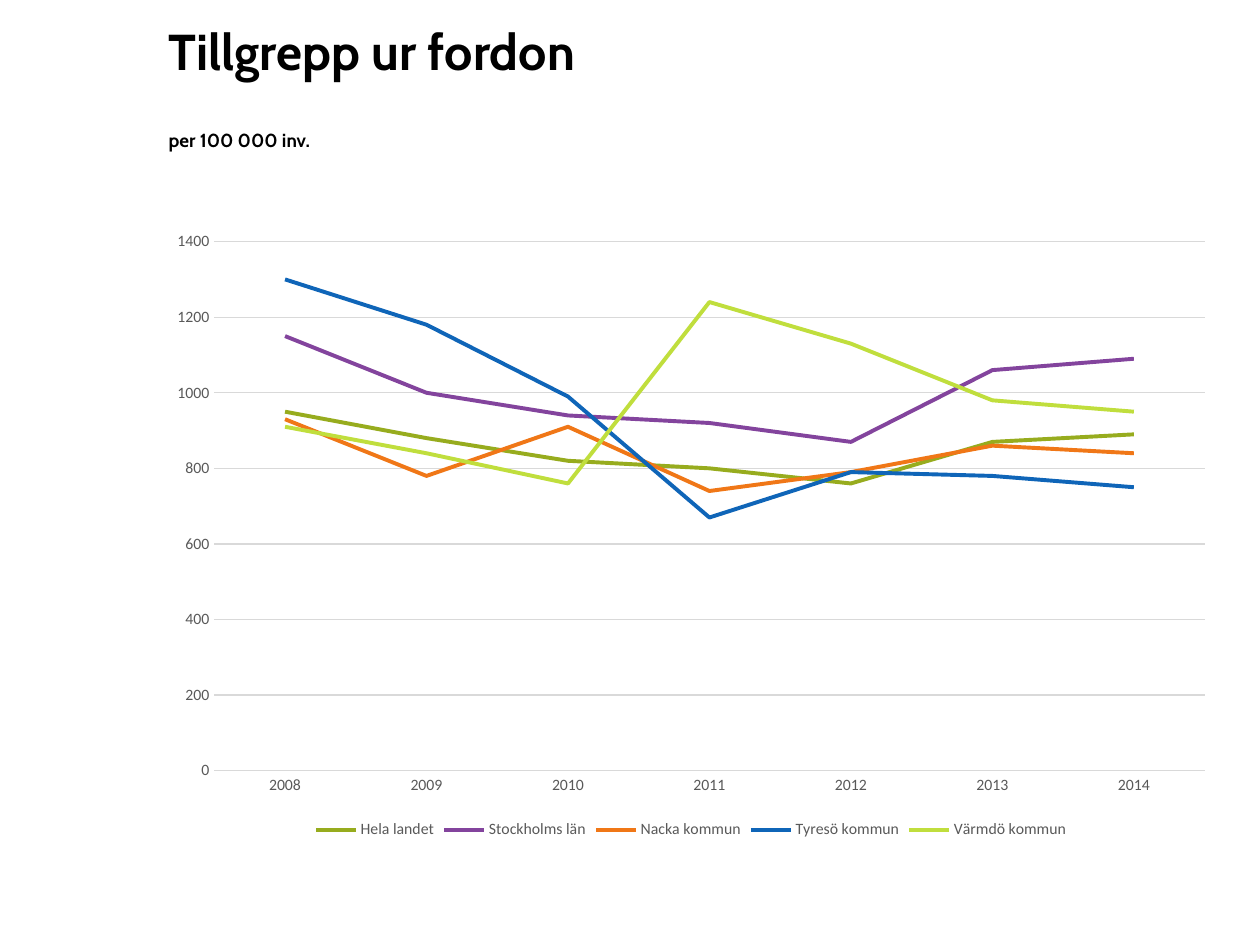
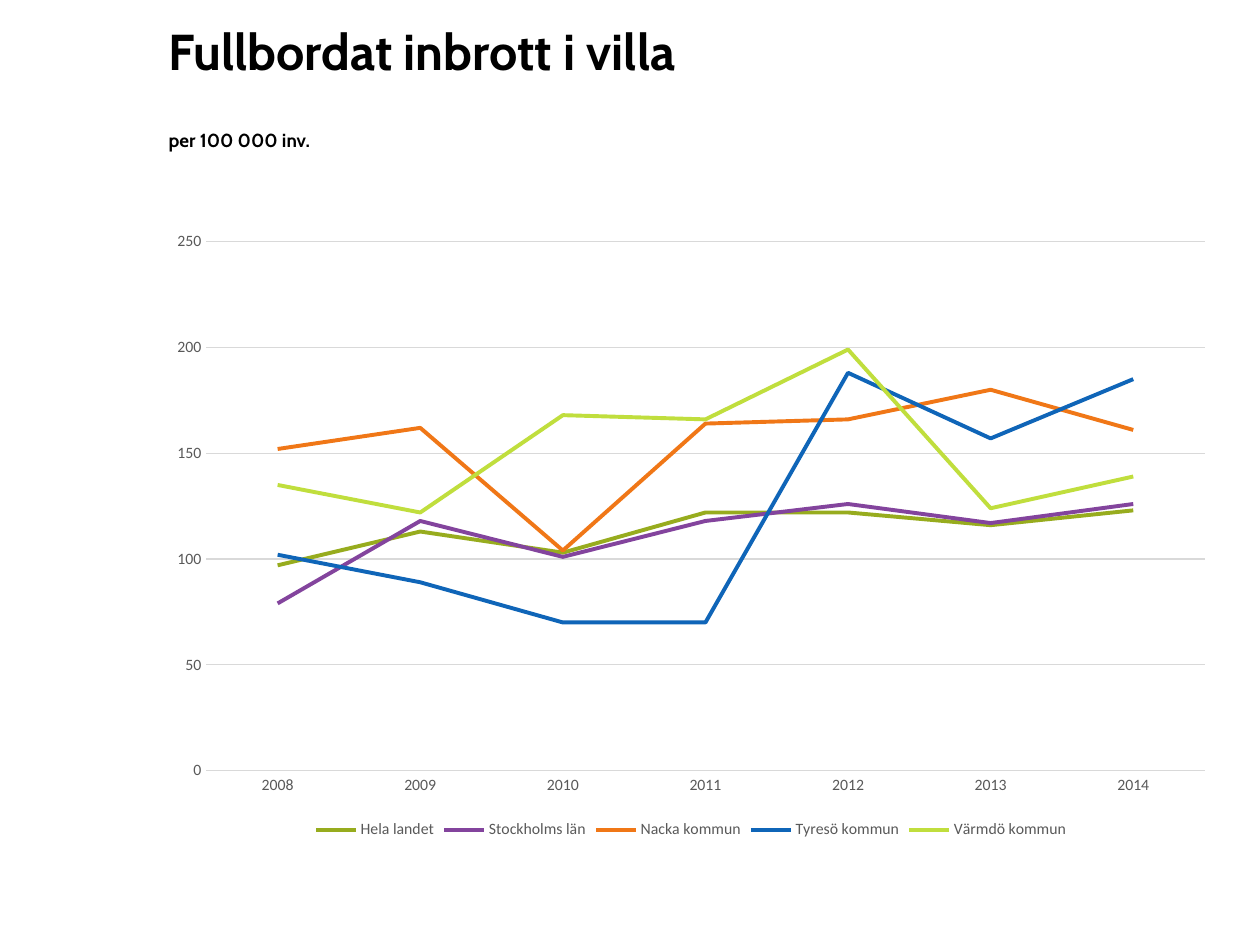
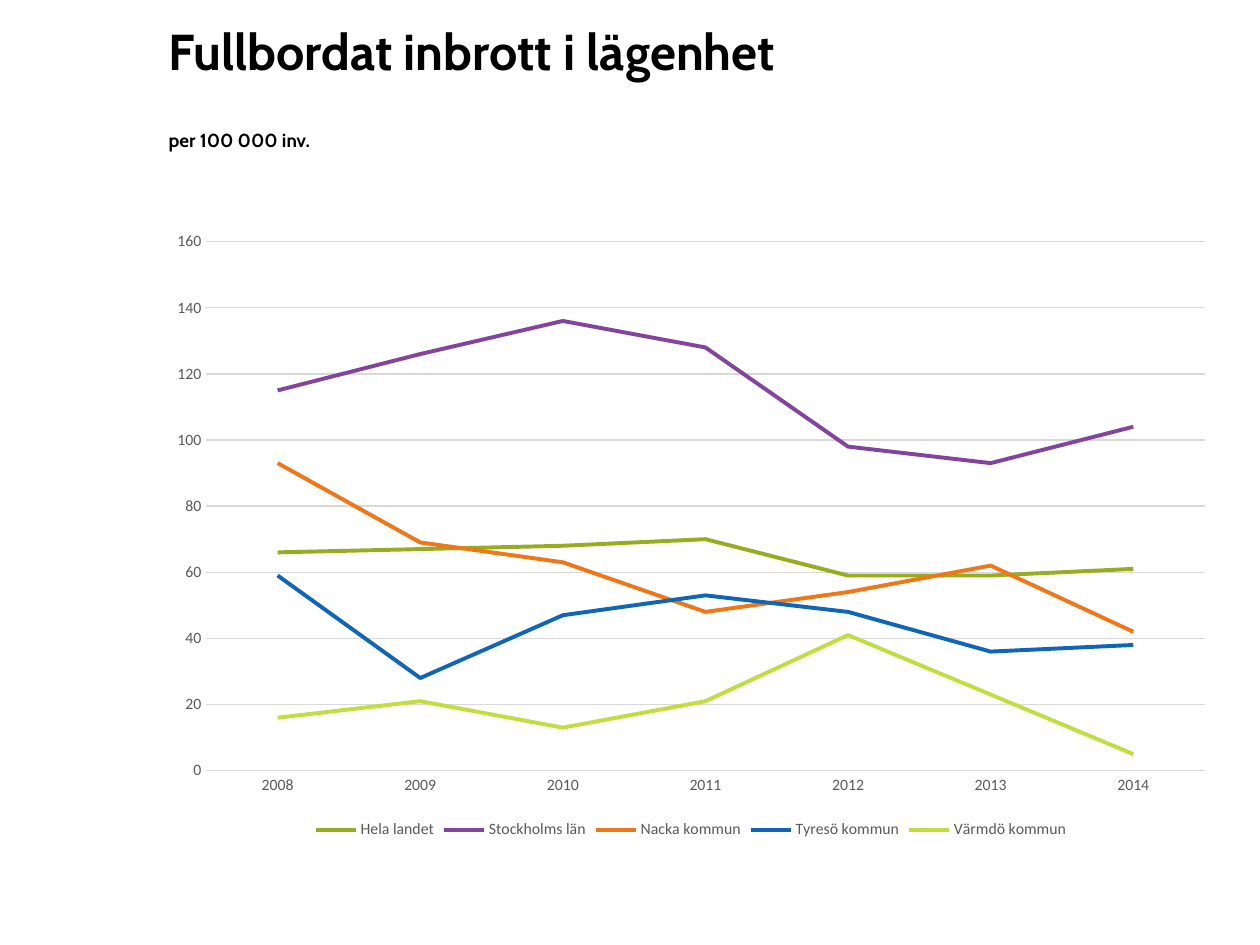
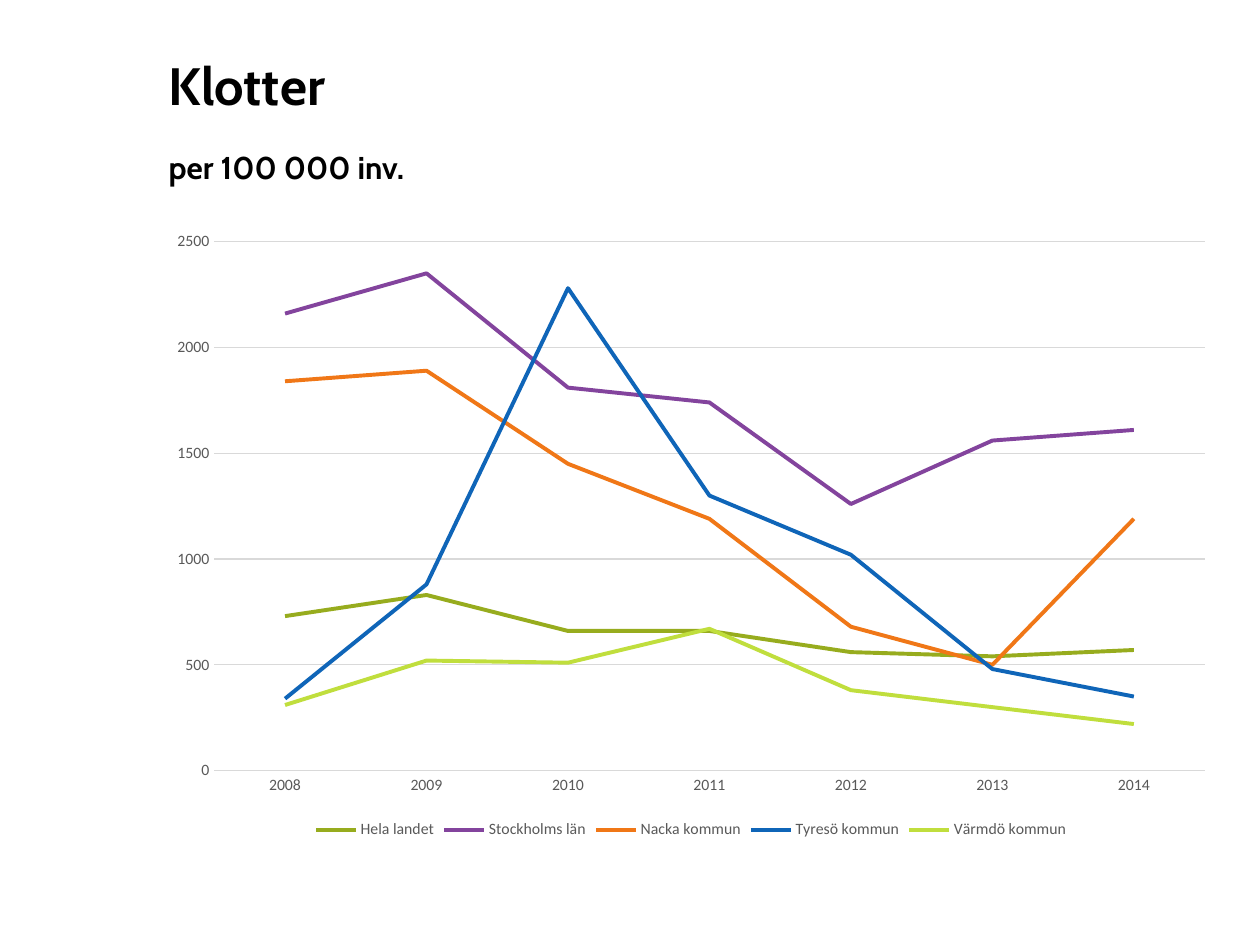
import pptx
import pptx.chart.data
import pptx.dml.color
import pptx.enum.chart
import pptx.enum.text
import pptx.util

PX = 914400 / 126  # EMU per px
FONT = {"title": "Cabin", "chart": "Calibri"}
COLORS = {
    "title": "000000",
    "chart": "000000",
    "label": "595959",
    "grid": "D9D9D9",
    "Hela landet": "97AC1E",
    "Stockholms län": "83449D",
    "Nacka kommun": "F07717",
    "Tyresö kommun": "0F65B8",
    "Värmdö kommun": "C0DE3D",
}
REGIONS = ["Hela landet", "Stockholms län", "Nacka kommun",
           "Tyresö kommun", "Värmdö kommun"]
YEARS = [str(year) for year in range(2008, 2015)]
UNIT = "per 100 000 inv."

# Shared frames: left, top, width, height in px
TITLE_BOX = (156, 38, 1070, 157)
CHART_BOX = (156, 220, 1070, 624)

# Title looks: sizes of both lines in points, space below in px
HIGH = {"sizes": (28.8, 10.8), "below": 44}
LOW = {"sizes": (30, 18), "below": 9}

# Title, look, and one row of values per region
SLIDES = [
    ("Tillgrepp ur fordon", HIGH, [
        (950, 880, 820, 800, 760, 870, 890),
        (1150, 1000, 940, 920, 870, 1060, 1090),
        (930, 780, 910, 740, 790, 860, 840),
        (1300, 1180, 990, 670, 790, 780, 750),
        (910, 840, 760, 1240, 1130, 980, 950),
    ]),
    ("Fullbordat inbrott i villa", HIGH, [
        (97, 113, 103, 122, 122, 116, 123),
        (79, 118, 101, 118, 126, 117, 126),
        (152, 162, 104, 164, 166, 180, 161),
        (102, 89, 70, 70, 188, 157, 185),
        (135, 122, 168, 166, 199, 124, 139),
    ]),
    ("Fullbordat inbrott i lägenhet", HIGH, [
        (66, 67, 68, 70, 59, 59, 61),
        (115, 126, 136, 128, 98, 93, 104),
        (93, 69, 63, 48, 54, 62, 42),
        (59, 28, 47, 53, 48, 36, 38),
        (16, 21, 13, 21, 41, 23, 5),
    ]),
    ("Klotter", LOW, [
        (730, 830, 660, 660, 560, 540, 570),
        (2160, 2350, 1810, 1740, 1260, 1560, 1610),
        (1840, 1890, 1450, 1190, 680, 500, 1190),
        (340, 880, 2280, 1300, 1020, 480, 350),
        (310, 520, 510, 670, 380, 300, 220),
    ]),
]


def px(n):
    return pptx.util.Emu(round(n * PX))


def set_attrs(obj, values):
    for name, value in values.items():
        setattr(obj, name, value)


def rgb(name):
    return pptx.dml.color.RGBColor.from_string(COLORS[name])


def style_font(font, family, size, color, bold=False):
    set_attrs(font, {"name": FONT[family], "size": pptx.util.Pt(size), "bold": bold})
    font.color.rgb = rgb(color)


def style_line(line, color, width):
    line.color.rgb = rgb(color)
    line.width = pptx.util.Pt(width)


def add_title(slide, text, look):
    sp = slide.shapes.title
    set_attrs(sp, dict(zip(("left", "top", "width", "height"), map(px, TITLE_BOX))))
    tf = sp.text_frame
    set_attrs(tf, {
        "word_wrap": True,
        "auto_size": pptx.enum.text.MSO_AUTO_SIZE.NONE,
        "vertical_anchor": pptx.enum.text.MSO_ANCHOR.BOTTOM,
        "margin_bottom": px(look["below"]),
    })
    p = tf.paragraphs[0]
    set_attrs(p, {"alignment": pptx.enum.text.PP_ALIGN.LEFT,
                  "line_spacing": pptx.util.Pt(40)})
    for i, (line, size) in enumerate(zip((text, UNIT), look["sizes"])):
        if i:
            p.add_line_break()
        r = p.add_run()
        r.text = line
        style_font(r.font, "title", size, "title", bold=True)


def style_axes(chart):
    for axis in (chart.category_axis, chart.value_axis):
        set_attrs(axis, {
            "major_tick_mark": pptx.enum.chart.XL_TICK_MARK.NONE,
            "minor_tick_mark": pptx.enum.chart.XL_TICK_MARK.NONE,
        })
        style_font(axis.tick_labels.font, "chart", 9, "label")
    style_line(chart.category_axis.format.line, "grid", 0.75)
    chart.value_axis.format.line.fill.background()
    style_line(chart.value_axis.major_gridlines.format.line, "grid", 0.75)


def add_line_chart(slide, rows):
    data = pptx.chart.data.CategoryChartData()
    data.categories = YEARS
    for region, values in zip(REGIONS, rows):
        data.add_series(region, values)
    chart = slide.shapes.add_chart(
        pptx.enum.chart.XL_CHART_TYPE.LINE, *map(px, CHART_BOX), data).chart
    set_attrs(chart, {"has_title": False, "has_legend": True})
    style_font(chart.font, "chart", 10, "chart")
    style_axes(chart)

    # Legend
    set_attrs(chart.legend, {
        "position": pptx.enum.chart.XL_LEGEND_POSITION.BOTTOM,
        "include_in_layout": False,
    })
    style_font(chart.legend.font, "chart", 9, "label")

    # One line per region
    plot = chart.plots[0]
    plot.vary_by_categories = False
    for s in plot.series:
        s.smooth = False
        s.marker.style = pptx.enum.chart.XL_MARKER_STYLE.NONE
        style_line(s.format.line, s.name, 2.25)


def main():
    prs = pptx.Presentation()
    set_attrs(prs, {"slide_width": px(1260), "slide_height": px(945)})
    title_only = prs.slide_layouts[5]
    for title, look, rows in SLIDES:
        slide = prs.slides.add_slide(title_only)
        add_title(slide, title, look)
        add_line_chart(slide, rows)
    prs.save("out.pptx")


if __name__ == "__main__":
    main()
